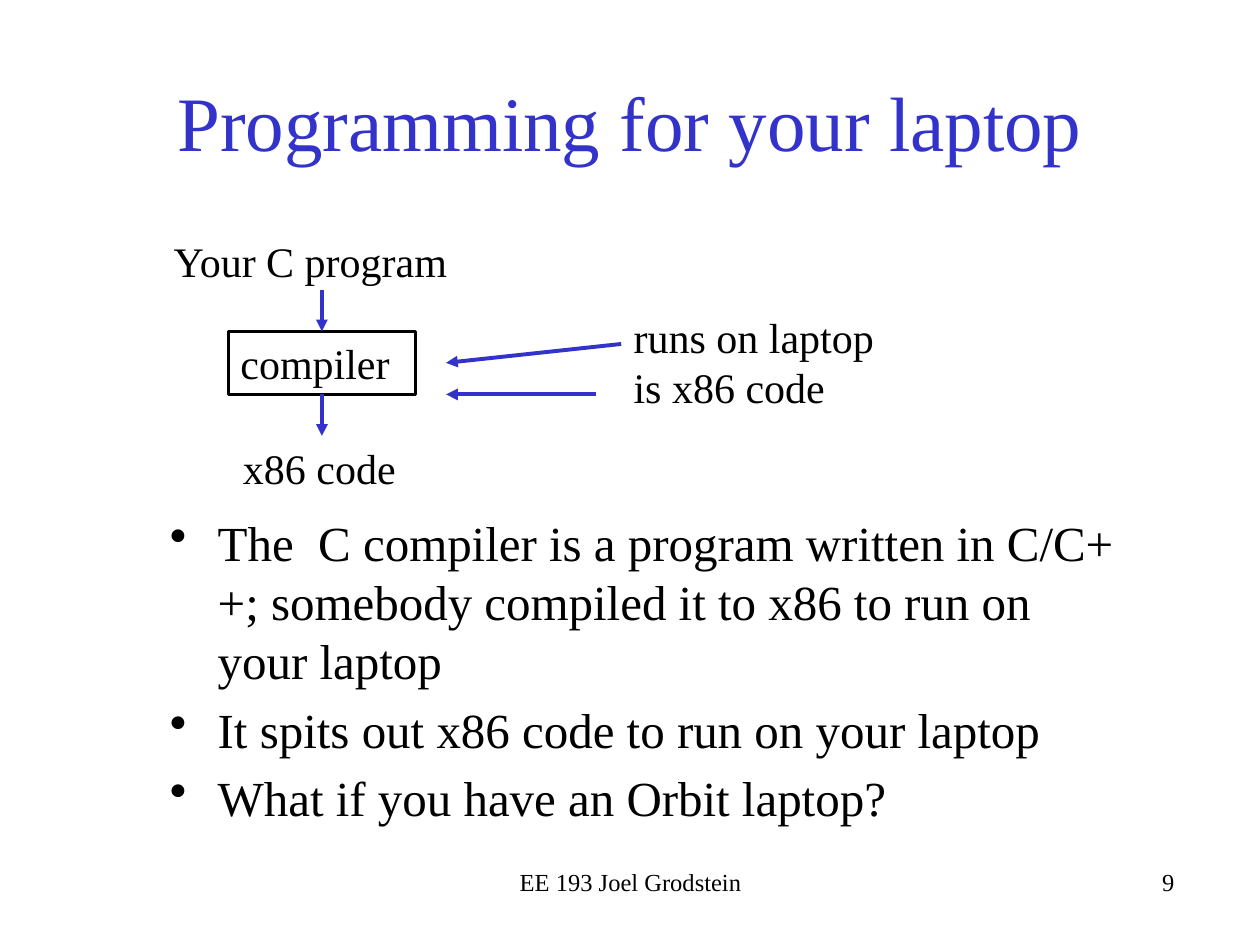
from dataclasses import dataclass

from lxml import etree
from pptx import Presentation
from pptx.dml.color import RGBColor
from pptx.enum import shapes, text
from pptx.oxml import ns
from pptx.util import Inches, Pt


@dataclass(frozen=True)
class Theme:
    font: str = "Times New Roman"
    ink: RGBColor = RGBColor(0x00, 0x00, 0x00)
    accent: RGBColor = RGBColor(0x33, 0x33, 0xCC)
    title: int = 44
    body: int = 28
    label: int = 24
    footer: int = 14
    outline: float = 1.75
    arrow: float = 2.25


THEME = Theme()
ALIGN = text.PP_ALIGN


@dataclass(frozen=True)
class Box:
    left: float
    top: float
    width: float
    height: float

    def inner(self, dx, dy, width, height):
        return Box(self.left + dx, self.top + dy, width, height)

    def emu(self):
        return [Inches(v) for v in (self.left, self.top, self.width, self.height)]


def write(frame, lines, size, color=THEME.ink, align=ALIGN.LEFT):
    frame.word_wrap = True
    for i, line in enumerate(lines):
        paragraph = frame.paragraphs[0] if i == 0 else frame.add_paragraph()
        paragraph.alignment = align
        run = paragraph.add_run()
        run.text = line
        run.font.name = THEME.font
        run.font.size = Pt(size)
        run.font.color.rgb = color


def add_label(slide, box, lines, size=THEME.label, **style):
    label = slide.shapes.add_textbox(*box.emu())
    write(label.text_frame, lines, size, **style)
    return label


def add_arrow(slide, x1, y1, x2, y2):
    arrow = slide.shapes.add_connector(
        shapes.MSO_CONNECTOR.STRAIGHT, x1, y1, x2, y2)
    arrow.line.color.rgb = THEME.accent
    arrow.line.width = Pt(THEME.arrow)
    etree.SubElement(arrow.line._get_or_add_ln(), ns.qn("a:tailEnd"), type="triangle")
    etree.SubElement(arrow._element.spPr, ns.qn("a:effectLst"))
    return arrow


def add_title(slide, box):
    title = add_label(slide, box, ["Programming for your laptop"], THEME.title,
                      color=THEME.accent, align=ALIGN.CENTER)
    title.text_frame.vertical_anchor = text.MSO_ANCHOR.MIDDLE


def add_compile_flow(slide, box):
    # Source, compiler and output, from top to bottom
    add_label(slide, box.inner(0, 0, 2.55, 0.5), ["Your C program"])
    add_label(slide, box.inner(0.55, 1.64, 1.49, 0.5), ["x86 code"])
    compiler = slide.shapes.add_shape(
        shapes.MSO_SHAPE.RECTANGLE, *box.inner(0.53, 0.81, 1.49, 0.5).emu())
    compiler.shadow.inherit = False
    compiler.fill.background()
    compiler.line.color.rgb = THEME.ink
    compiler.line.width = Pt(THEME.outline)
    compiler.text_frame.vertical_anchor = text.MSO_ANCHOR.TOP
    write(compiler.text_frame, ["compiler"], THEME.label)

    # Arrows into and out of the compiler
    center = compiler.left + compiler.width // 2
    bottom = compiler.top + compiler.height
    step = Inches(0.33)
    source_arrow = add_arrow(slide, center, compiler.top - step, center, compiler.top)
    source_arrow.end_connect(compiler, 0)
    output_arrow = add_arrow(slide, center, bottom, center, bottom + step)
    output_arrow.begin_connect(compiler, 2)


def add_compiler_notes(slide, box):
    add_label(slide, box.inner(1.39, 0, 2.32, 0.91),
              ["runs on laptop", "is x86 code"])
    # Pointers from each note back to the compiler
    for start_x, start_y, end_y in ((1.39, 0.31, 0.46), (1.19, 0.71, 0.71)):
        add_arrow(slide, Inches(box.left + start_x), Inches(box.top + start_y),
                  Inches(box.left), Inches(box.top + end_y))


def add_points(slide, box):
    points = add_label(slide, box, [
        "The  C compiler is a program written in C/C++; "
        "somebody compiled it to x86 to run on your laptop",
        "It spits out x86 code to run on your laptop",
        "What if you have an Orbit laptop?",
    ], THEME.body)
    indent = Inches(0.38)
    for paragraph in points.text_frame.paragraphs:
        paragraph.space_before = Pt(THEME.body * 0.2)
        properties = paragraph._p.get_or_add_pPr()
        properties.set("marL", str(indent))
        properties.set("indent", str(-indent))
        etree.SubElement(properties, ns.qn("a:buChar"), char="•")


def add_footer(slide, box):
    add_label(slide, box.inner(0, 0, 3.17, box.height),
              ["EE 193 Joel Grodstein"], THEME.footer, align=ALIGN.CENTER)
    add_label(slide, box.inner(2.83, 0, 3.17, box.height),
              ["9"], THEME.footer, align=ALIGN.RIGHT)


def main():
    deck = Presentation()
    deck.slide_width, deck.slide_height = Inches(10), Inches(7.5)
    slide = deck.slides.add_slide(deck.slide_layouts[6])
    add_title(slide, Box(0.75, 0.33, 8.5, 1.25))
    add_compile_flow(slide, Box(1.28, 1.82, 2.55, 2.14))
    add_compiler_notes(slide, Box(3.54, 2.42, 3.71, 0.91))
    add_points(slide, Box(1.25, 4.02, 7.8, 2.66))
    add_footer(slide, Box(3.42, 6.83, 6, 0.5))
    deck.save("out.pptx")


if __name__ == "__main__":
    main()
